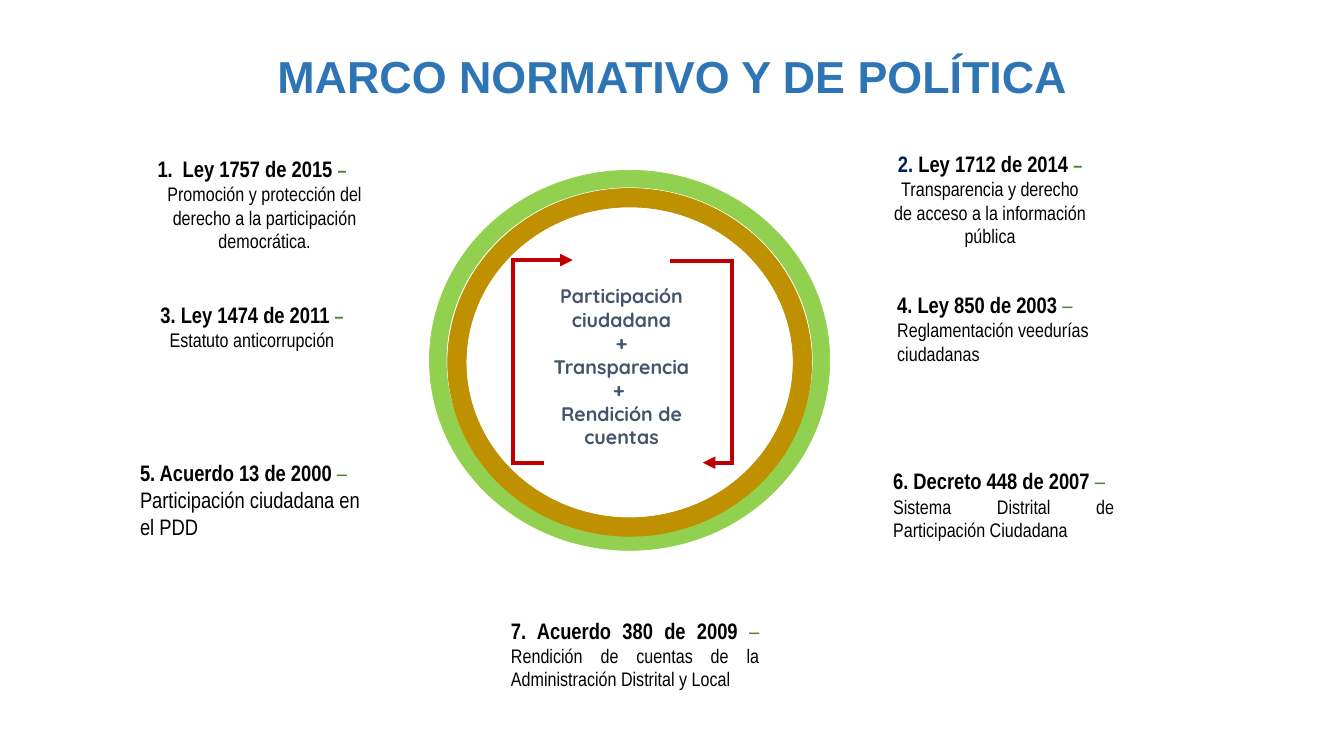
import pptx
import pptx.util
import pptx.dml.color
import pptx.enum.shapes
import pptx.enum.text
import pptx.oxml.ns
import lxml.etree

RGBColor = pptx.dml.color.RGBColor
Inches, Pt = pptx.util.Inches, pptx.util.Pt
ALIGN = pptx.enum.text.PP_ALIGN
ANCHOR = pptx.enum.text.MSO_ANCHOR
qn = pptx.oxml.ns.qn

BLUE = RGBColor(0x2E, 0x75, 0xB6)
NAVY = RGBColor(0x00, 0x20, 0x60)
SLATE = RGBColor(0x44, 0x54, 0x6A)
BLACK = RGBColor(0x00, 0x00, 0x00)
DARK_GREEN = RGBColor(0x54, 0x82, 0x35)
LIME = RGBColor(0x92, 0xD0, 0x50)
OCHRE = RGBColor(0xBF, 0x90, 0x00)
RED = RGBColor(0xC0, 0x00, 0x00)

# Text styles: font, size, bold, colour
TITLE = ("Arial", 32, True, BLUE)
CORE = ("Quicksand", 14, True, SLATE)
NUMBER = ("Arial Narrow", 16, True, NAVY)
LAW = ("Arial Narrow", 16, True, BLACK)
DASH = ("Arial Narrow", 16, False, DARK_GREEN)
BOLD_DASH = ("Arial Narrow", 14, True, DARK_GREEN)
BODY = ("Arial Narrow", 14, False, BLACK)
LARGE_BODY = ("Arial Narrow", 16, False, BLACK)

# Columns of the slide, in inches
LEFT_COL, MID_COL, RIGHT_COL = 1.27, 4.97, 8.76

# Content: box (left, top, width, height), then paragraphs of (alignment, runs)
title = ((0.92, 0.4, 11.5, 0.69),
         [(ALIGN.CENTER, [("MARCO NORMATIVO Y DE POLÍTICA", TITLE)])])
core = ((5.15, 2.77, 2.03, 1.82),
        [(ALIGN.CENTER, [(line, CORE)]) for line in (
            "Participación ciudadana", "+", "Transparencia", "+ ",
            "Rendición de cuentas")])
law_1 = ((LEFT_COL, 1.49, 2.46, 1.08), [(ALIGN.CENTER, [
    ("Ley 1757 de 2015 ", LAW), ("– ", BOLD_DASH),
    ("Promoción y protección del derecho a la participación democrática.", BODY)])])
laws = [
    ((RIGHT_COL, 1.44, 2.12, 1.11), [(ALIGN.CENTER, [
        ("2. ", NUMBER), ("Ley 1712 de 2014 ", LAW), ("– ", BOLD_DASH),
        ("Transparencia y derecho de acceso a la información pública", BODY)])]),
    ((LEFT_COL, 2.94, 2.46, 0.61), [(ALIGN.CENTER, [
        ("3. Ley 1474 de 2011 ", LAW), ("– ", BOLD_DASH),
        ("Estatuto anticorrupción", BODY)])]),
    ((RIGHT_COL + 0.04, 2.84, 2.39, 0.84), [
        (ALIGN.JUSTIFY, [("4. Ley 850 de 2003 ", LAW), ("–", DASH)]),
        (ALIGN.LEFT, [("Reglamentación veedurías ciudadanas", BODY)])]),
    ((LEFT_COL + 0.02, 4.51, 2.41, 0.91), [
        (ALIGN.LEFT, [("5. Acuerdo 13 de 2000 ", LAW), ("–", DASH)]),
        (ALIGN.LEFT, [("Participación ciudadana en el PDD", LARGE_BODY)])]),
    ((RIGHT_COL, 4.59, 2.39, 1.04), [
        (ALIGN.JUSTIFY, [("6. Decreto 448 de 2007 ", LAW), ("–", DASH)]),
        (ALIGN.JUSTIFY, [("Sistema Distrital de Participación Ciudadana", BODY)])]),
    ((MID_COL, 6.07, 2.66, 0.84), [(ALIGN.JUSTIFY, [
        ("7. Acuerdo 380 de 2009 ", LAW), ("– ", DASH),
        ("Rendición de cuentas de la Administración Distrital y Local", BODY)])]),
]
# Rings: box, thickness share, colour
rings = [((4.26, 1.69, 3.97, 3.77), 0.044, LIME),
         ((4.44, 1.87, 3.61, 3.45), 0.053, OCHRE)]
# Bracket arrows: tail x, spine x, tip x, start y, end y
brackets = [(6.65, 7.26, 6.97, 2.59, 4.59),
            (5.40, 5.09, 5.68, 4.59, 2.58)]
HALF_LINE = 0.02

prs = pptx.Presentation()
prs.slide_width, prs.slide_height = Inches(13.33), Inches(7.5)
s = prs.slides.add_slide(prs.slide_layouts[6])


def add_text(box, paragraphs):
    sp = s.shapes.add_textbox(*map(Inches, box))
    tf = sp.text_frame
    tf.word_wrap = True
    for i, (align, runs) in enumerate(paragraphs):
        p = tf.paragraphs[0] if i == 0 else tf.add_paragraph()
        p.alignment = align
        for text, (font, size, bold, colour) in runs:
            r = p.add_run()
            r.text = text
            r.font.name, r.font.size, r.font.bold = font, Pt(size), bold
            r.font.color.rgb = colour
    return tf


def add_line(x1, y1, x2, y2, arrow=False):
    c = s.shapes.add_connector(pptx.enum.shapes.MSO_CONNECTOR.STRAIGHT,
                               *map(Inches, (x1, y1, x2, y2)))
    c.line.color.rgb, c.line.width = RED, Pt(3)
    if arrow:
        lxml.etree.SubElement(c.line._get_or_add_ln(), qn("a:tailEnd"), type="triangle")
    lxml.etree.SubElement(c._element.spPr, qn("a:effectLst"))


# Title
add_text(*title).vertical_anchor = ANCHOR.MIDDLE

# First law, with an automatic number
pPr = add_text(*law_1).paragraphs[0]._p.get_or_add_pPr()
pPr.set("marL", str(Inches(0.25)))
pPr.set("indent", str(-Inches(0.25)))
lxml.etree.SubElement(pPr, qn("a:buAutoNum"), type="arabicPeriod")

# Rings
for box, thickness, colour in rings:
    sp = s.shapes.add_shape(pptx.enum.shapes.MSO_SHAPE.DONUT, *map(Inches, box))
    sp.adjustments[0] = thickness
    sp.shadow.inherit = False
    sp.fill.solid()
    sp.fill.fore_color.rgb = colour
    sp.line.color.rgb, sp.line.width = colour, Pt(0.5)

# Centre text and the brackets around it
add_text(*core)
for tail, spine, tip, start, end in brackets:
    corner = spine + (HALF_LINE if spine > tail else -HALF_LINE)
    add_line(tail, start, corner, start)
    add_line(spine, start, spine, end)
    add_line(corner, end, tip, end, arrow=True)

# Remaining laws
for law in laws:
    add_text(*law)

prs.save("out.pptx")
